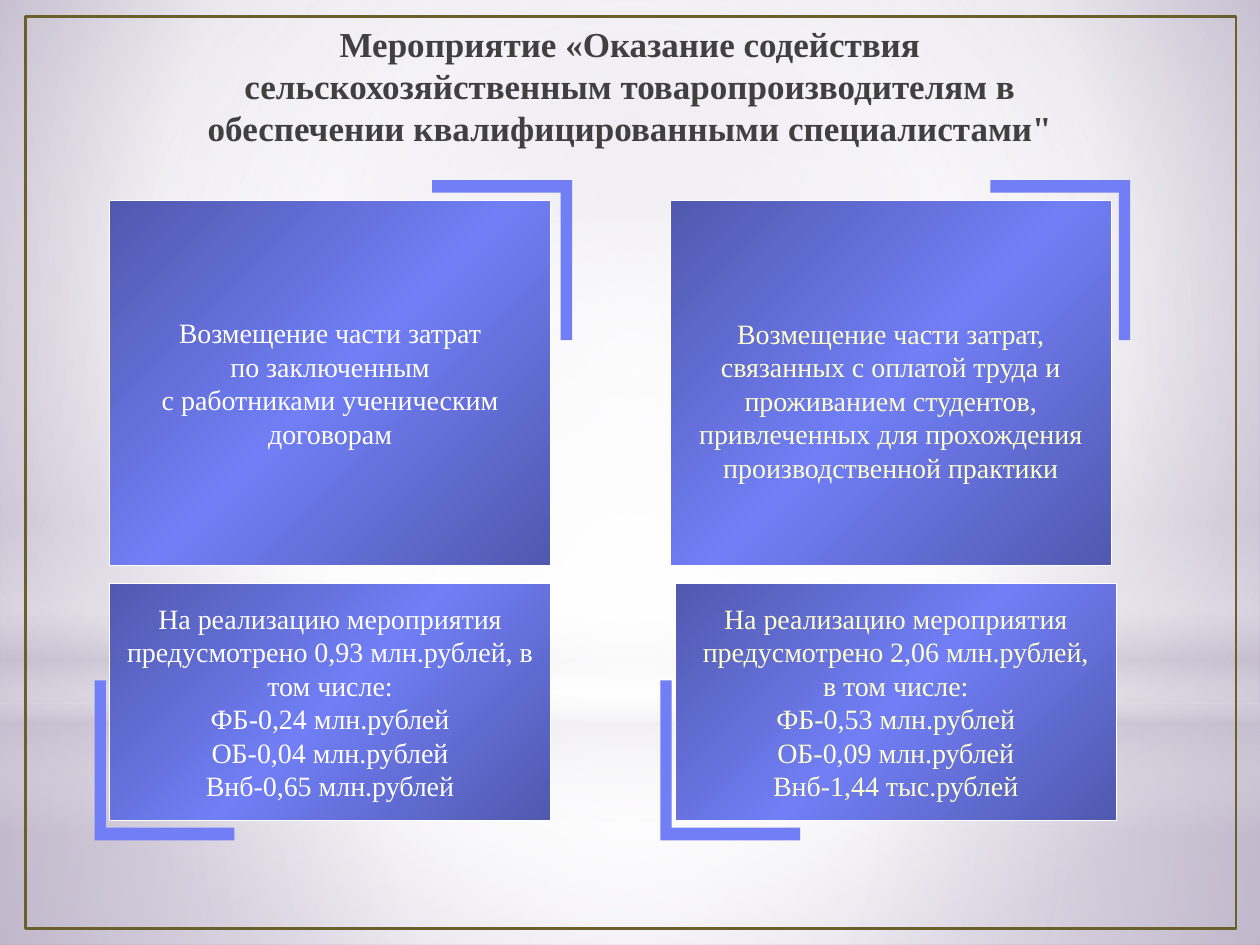
"""Build a slide on support for agricultural producers in hiring qualified staff."""
from lxml import etree
from pptx import Presentation
from pptx import util as u
from pptx.dml.color import RGBColor
from pptx.enum import shapes, text
from pptx.oxml import ns

WHITE = RGBColor(0xFF, 0xFF, 0xFF)
CREAM = RGBColor(0xFF, 0xFF, 0xCC)
BLUE = RGBColor(0x71, 0x7E, 0xF5)
OLIVE = RGBColor(0x6B, 0x5F, 0x2B)
MAUVE = RGBColor(0xC9, 0xC2, 0xD1)
LILAC = RGBColor(0xC1, 0xB7, 0xCD)
PURPLE = RGBColor(0xA1, 0x91, 0xB5)
BLACK = RGBColor(0x00, 0x00, 0x00)
CHARCOAL = RGBColor(0x40, 0x40, 0x40)
GRAY = RGBColor(0x69, 0x67, 0x6D)
CENTER = (50, 50, 50, 50)
FONT = "Times New Roman"


def set_gradient(element, stops, angle=None, focus=None):
    """Replace the first solid fill; a stop is position, colour, modifier, percent."""
    solid = element.find(".//" + ns.qn("a:solidFill"))
    gradient = etree.Element(ns.qn("a:gradFill"), rotWithShape="1")
    stop_list = etree.SubElement(gradient, ns.qn("a:gsLst"))
    for position, color, *modifier in stops:
        stop = etree.SubElement(stop_list, ns.qn("a:gs"), pos=str(position * 1000))
        value = etree.SubElement(stop, ns.qn("a:srgbClr"), val=str(color))
        if modifier:
            name, percent = modifier
            etree.SubElement(value, ns.qn("a:" + name), val=str(percent * 1000))
    if focus:
        circle = etree.SubElement(gradient, ns.qn("a:path"))
        circle.set("path", "circle")
        sides = {side: str(part * 1000) for side, part in zip("ltrb", focus)}
        etree.SubElement(circle, ns.qn("a:fillToRect"), **sides)
    else:
        etree.SubElement(gradient, ns.qn("a:lin"), ang=str(angle * 60000), scaled="0")
    solid.getparent().replace(solid, gradient)


def write_text(shape, lines, size=16, color=WHITE, bold=False,
               anchor=text.MSO_ANCHOR.MIDDLE, top=0.05):
    frame = shape.text_frame
    frame.word_wrap = True
    frame.auto_size = text.MSO_AUTO_SIZE.NONE
    frame.vertical_anchor = anchor
    frame.margin_top = u.Inches(top)
    frame.text = "\n".join(lines)
    for paragraph in frame.paragraphs:
        paragraph.alignment = text.PP_ALIGN.CENTER
        for run in paragraph.runs:
            run.font.name = FONT
            run.font.size = u.Pt(size)
            run.font.bold = bold
            run.font.color.rgb = color


presentation = Presentation()
presentation.slide_width = u.Inches(10)
presentation.slide_height = u.Inches(7.5)
slide = presentation.slides.add_slide(presentation.slide_layouts[5])
slide.background.fill.solid()
slide.background.fill.fore_color.rgb = WHITE
set_gradient(slide.element, [(0, LILAC), (60, WHITE), (100, PURPLE)],
             focus=(20, 10, 20, 60))

RECTANGLE = shapes.MSO_SHAPE.RECTANGLE
floor_stops = [(0, WHITE, "alpha", 91), (37, WHITE, "alpha", 76), (100, MAUVE, "alpha", 79)]
wall_stops = [(0, WHITE, "alpha", 89), (48, WHITE, "alpha", 62), (100, MAUVE, "alpha", 79)]
horizon_stops = [(0, WHITE, "alpha", 0), (29, WHITE, "alpha", 30), (45, MAUVE, "alpha", 40),
                 (55, WHITE, "alpha", 26), (65, MAUVE, "alpha", 60), (100, WHITE, "alpha", 0)]
glow_stops = [(0, WHITE), (56, WHITE, "alpha", 0)]
layers = [
    (RECTANGLE, 5.58, 1.92, floor_stops, {"focus": CENTER}),
    (RECTANGLE, 0, 5.58, wall_stops, {"focus": CENTER}),
    (RECTANGLE, 4.12, 2.5, horizon_stops, {"angle": 90}),
    (shapes.MSO_SHAPE.OVAL, 1.75, 5.58, glow_stops, {"focus": CENTER}),
]
for kind, top, height, stops, direction in layers:
    layer = slide.shapes.add_shape(kind, 0, u.Inches(top), u.Inches(10), u.Inches(height))
    layer.shadow.inherit = False
    layer.fill.solid()
    layer.fill.fore_color.rgb = WHITE
    layer.line.fill.background()
    set_gradient(layer.element, stops, **direction)

title = slide.shapes.title
title.left, title.top = u.Inches(1.44), u.Inches(0.13)
title.width, title.height = u.Inches(7.12), u.Inches(1.25)
write_text(title, ["Мероприятие «Оказание содействия сельскохозяйственным "
                   "товаропроизводителям в обеспечении квалифицированными специалистами\""],
           size=20, color=CHARCOAL, bold=True, anchor=text.MSO_ANCHOR.TOP)
set_gradient(title.element, [(0, BLACK), (40, CHARCOAL), (100, GRAY, "alpha", 65)], angle=90)
title.element.getparent().append(title.element)

frame = slide.shapes.add_shape(RECTANGLE, u.Inches(0.2), u.Inches(0.13),
                               u.Inches(9.61), u.Inches(7.24))
frame.shadow.inherit = False
frame.fill.background()
frame.line.color.rgb = OLIVE
frame.line.width = u.Pt(1.5)

bracket_outline = [(0, 0), (0, 1.27), (0.09, 1.27), (0.09, 0.1), (1.11, 0.1), (1.11, 0)]
for corner_x, corner_y, sign in [(0.75, 6.67, 1), (5.24, 6.67, 1),
                                 (4.54, 1.43, -1), (8.97, 1.43, -1)]:
    points = [(u.Inches(corner_x + sign * across), u.Inches(corner_y - sign * up))
              for across, up in bracket_outline]
    builder = slide.shapes.build_freeform(*points[0])
    builder.add_line_segments(points[1:], close=True)
    bracket = builder.convert_to_shape()
    bracket.shadow.inherit = False
    bracket.fill.solid()
    bracket.fill.fore_color.rgb = BLUE
    bracket.line.fill.background()

boxes = [
    (0.87, 1.59, 2.9, WHITE, 0.05,
     ["Возмещение части затрат\vпо заключенным\vс работниками ученическим договорам"]),
    (5.32, 1.59, 2.9, CREAM, 0.32,
     ["Возмещение части затрат, связанных с оплатой труда и проживанием студентов, "
      "привлеченных для прохождения производственной практики"]),
    (0.87, 4.63, 1.88, WHITE, 0.05,
     ["На реализацию мероприятия предусмотрено 0,93 млн.рублей, в том числе:",
      "ФБ-0,24 млн.рублей", "ОБ-0,04 млн.рублей", "Внб-0,65 млн.рублей"]),
    (5.36, 4.63, 1.88, CREAM, 0.05,
     ["На реализацию мероприятия предусмотрено 2,06 млн.рублей,", "в том числе:",
      "ФБ-0,53 млн.рублей", "ОБ-0,09 млн.рублей", "Внб-1,44 тыс.рублей"]),
]
for left, top, height, color, margin, lines in boxes:
    box = slide.shapes.add_shape(RECTANGLE, u.Inches(left), u.Inches(top),
                                 u.Inches(3.5), u.Inches(height))
    box.shadow.inherit = False
    box.fill.solid()
    box.fill.fore_color.rgb = BLUE
    box.line.color.rgb = WHITE
    box.line.width = u.Pt(0.75)
    set_gradient(box.element, [(0, BLUE, "shade", 46), (50, BLUE), (100, BLUE, "shade", 46)],
                 angle=45)
    write_text(box, lines, color=color, top=margin)

presentation.save("out.pptx")
